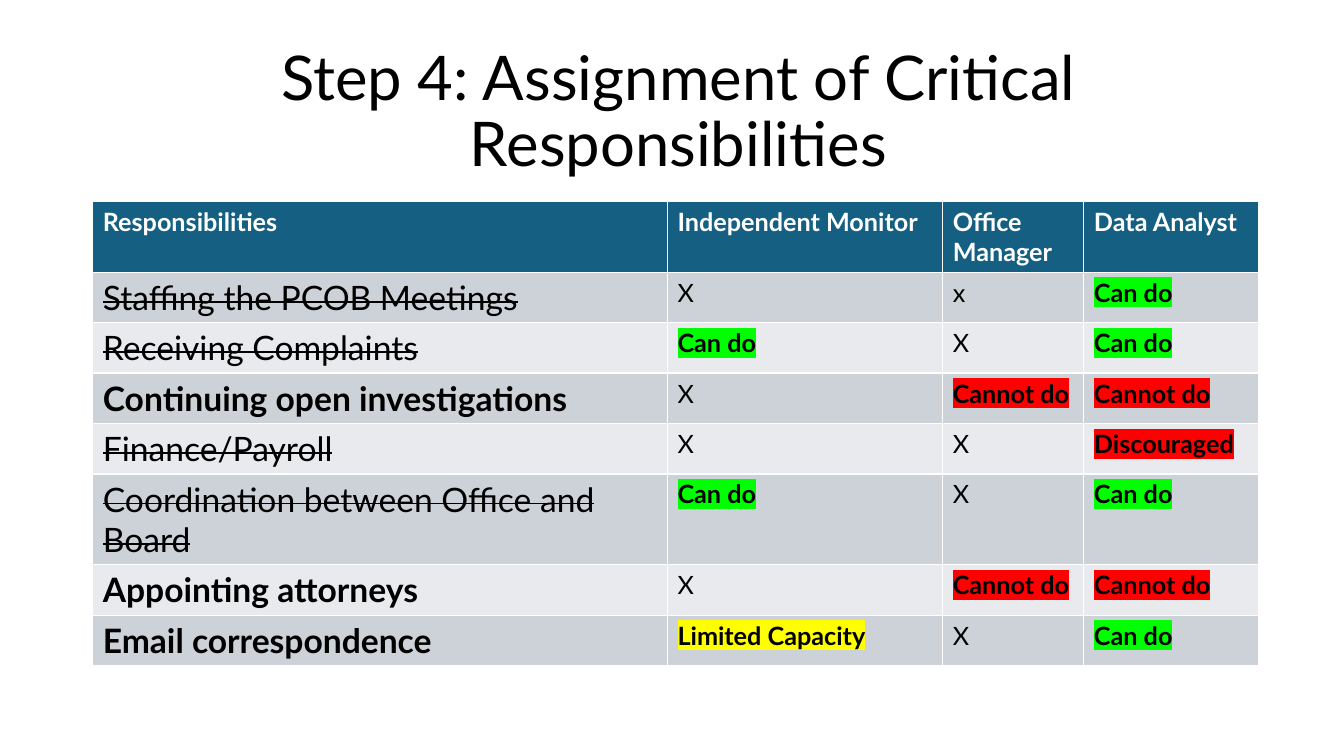
"""Build the slide that assigns critical responsibilities to staff roles."""
import pptx
import pptx.dml.color
import pptx.enum.text
import pptx.util
from lxml import etree
from pptx.oxml.ns import qn

Inches, Pt = pptx.util.Inches, pptx.util.Pt
RGB = pptx.dml.color.RGBColor.from_string
COLORS = {"black": "000000", "white": "FFFFFF", "header": "156082",
          "odd": "CCD2D8", "even": "E8EAED"}
HIGHLIGHTS = {"Can do": "00FF00", "Cannot do": "FF0000",
              "Discouraged": "FF0000", "Limited Capacity": "FFFF00"}
ROWS = [
    ("Responsibilities", "Independent Monitor", "Office Manager", "Data Analyst"),
    ("Staffing the PCOB Meetings", "X", "x", "Can do"),
    ("Receiving Complaints", "Can do", "X", "Can do"),
    ("Continuing open investigations", "X", "Cannot do", "Cannot do"),
    ("Finance/Payroll", "X", "X", "Discouraged"),
    ("Coordination between Office and Board", "Can do", "X", "Can do"),
    ("Appointing attorneys", "X", "Cannot do", "Cannot do"),
    ("Email correspondence", "Limited Capacity", "X", "Can do"),
]
OPEN_TASKS = {"Continuing open investigations", "Appointing attorneys",
              "Email correspondence"}
COL_WIDTHS = [5.7, 2.73, 1.4, 1.73]
ROW_HEIGHTS = [0.68, 0.5, 0.5, 0.5, 0.5, 0.9, 0.5, 0.5]


def set_font(p, size, color, bold=False):
    p.font.name = "Lato"
    p.font.size = Pt(size)
    p.font.bold = bold
    p.font.color.rgb = RGB(COLORS[color])


prs = pptx.Presentation()
prs.slide_width, prs.slide_height = Inches(13.33), Inches(7.5)
s = prs.slides.add_slide(prs.slide_layouts[5])

title = s.shapes.title
title.left, title.top = Inches(0.92), Inches(0.4)
title.width, title.height = Inches(11.62), Inches(1.45)
tf = title.text_frame
tf.text = "Step 4: Assignment of Critical Responsibilities"
tf.word_wrap = True
tf.auto_size = pptx.enum.text.MSO_AUTO_SIZE.NONE
tf.vertical_anchor = pptx.enum.text.MSO_ANCHOR.MIDDLE
p = tf.paragraphs[0]
p.alignment = pptx.enum.text.PP_ALIGN.CENTER
p.line_spacing = 0.9
set_font(p, 44, "black")

table = s.shapes.add_table(
    len(ROWS), len(COL_WIDTHS), Inches(0.92), Inches(2),
    Inches(sum(COL_WIDTHS)), Inches(sum(ROW_HEIGHTS))).table
for col, width in zip(table.columns, COL_WIDTHS):
    col.width = Inches(width)
for row, height in zip(table.rows, ROW_HEIGHTS):
    row.height = Inches(height)

for i, texts in enumerate(ROWS):
    fill = "header" if i == 0 else "odd" if i % 2 else "even"
    for j, text in enumerate(texts):
        cell = table.cell(i, j)
        cell.fill.solid()
        cell.fill.fore_color.rgb = RGB(COLORS[fill])
        p = cell.text_frame.paragraphs[0]
        r = p.add_run()
        r.text = text
        is_task = i > 0 and j == 0
        bold = i == 0 or text in OPEN_TASKS or text in HIGHLIGHTS
        set_font(p, 24 if is_task else 18, "black" if i else "white", bold)
        rPr = r.font._element
        if is_task and not bold:
            rPr.set("strike", "sngStrike")
        if text in HIGHLIGHTS:
            highlight = etree.SubElement(rPr, qn("a:highlight"))
            etree.SubElement(highlight, qn("a:srgbClr"), val=HIGHLIGHTS[text])

prs.save("out.pptx")
